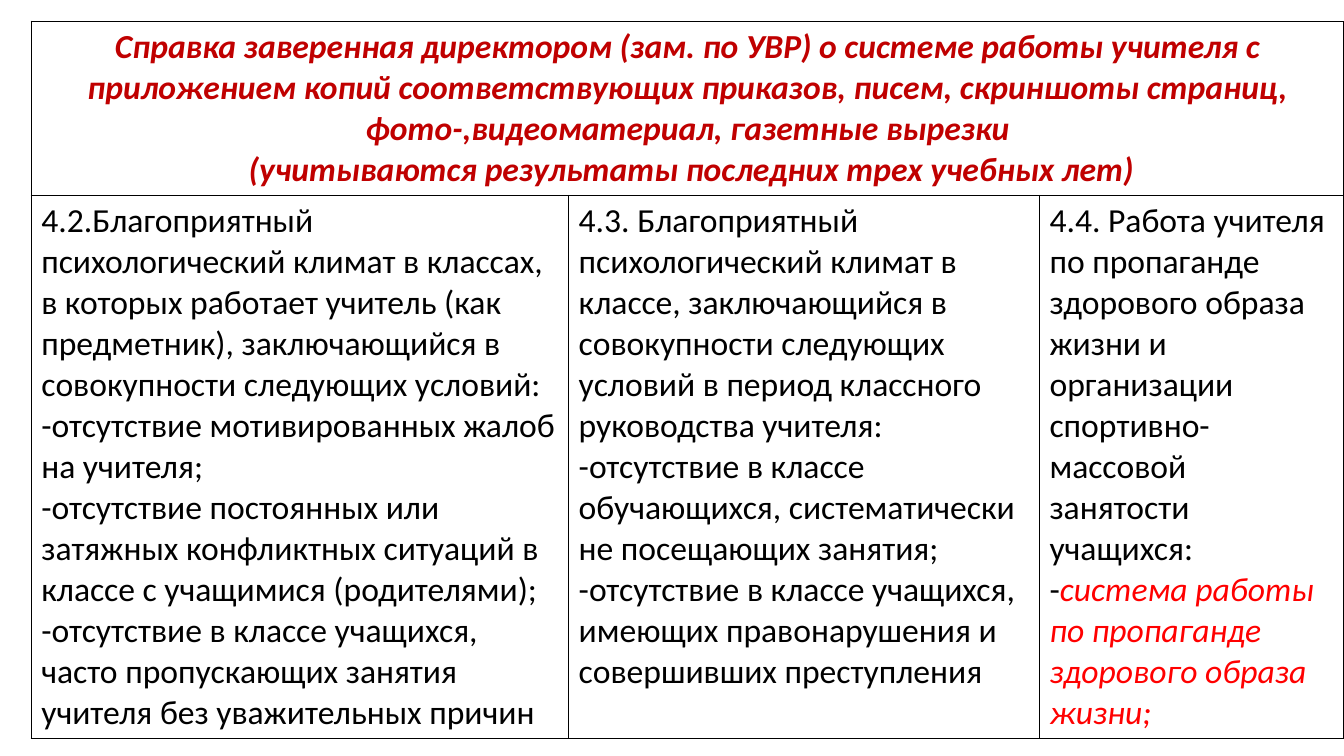
import pptx
import pptx.dml.color
import pptx.enum.text
import pptx.oxml
import pptx.oxml.ns
import pptx.util

Inches = pptx.util.Inches

COLORS = {"head": "C00000", "text": "000000", "note": "FF0000", "line": "000000"}
PLAIN = ("text", False, False)
HEAD = ("head", True, True)
NOTE = ("note", False, True)

# A cell is a list of paragraphs, a paragraph a list of (text, style) runs.
TITLE = [
    [("Справка заверенная директором (зам. по УВР) о системе работы учителя с "
      "приложением копий соответствующих приказов, писем, скриншоты страниц, "
      "фото-,видеоматериал, газетные вырезки", HEAD)],
    [(" (учитываются результаты последних трех учебных лет)", HEAD)],
]
CLIMATE = [
    [("4.2.Благоприятный психологический климат в классах, в которых работает "
      "учитель (как предметник), заключающийся в совокупности следующих условий:", PLAIN)],
    [("-отсутствие мотивированных жалоб на учителя;", PLAIN)],
    [("-отсутствие постоянных или затяжных конфликтных ситуаций в классе с "
      "учащимися (родителями);", PLAIN)],
    [("-отсутствие в классе учащихся, часто пропускающих занятия учителя без "
      "уважительных причин", PLAIN)],
]
CLASS = [
    [("4.3. Благоприятный психологический климат в классе, заключающийся в "
      "совокупности следующих условий в период классного руководства учителя:", PLAIN)],
    [("-отсутствие в классе обучающихся, систематически не посещающих занятия;", PLAIN)],
    [("-отсутствие в классе учащихся, имеющих правонарушения и совершивших "
      "преступления", PLAIN)],
]
HEALTH = [
    [("4.4. Работа учителя по пропаганде здорового образа жизни и организации\n"
      "спортивно-массовой занятости учащихся:\n-", PLAIN),
     ("система работы по пропаганде здорового образа жизни;", NOTE)],
]


class Deck:
    def __init__(self, font, size):
        self.font, self.size = font, pptx.util.Pt(size)
        self.file = pptx.Presentation()
        self.file.slide_width = Inches(13.33)
        self.file.slide_height = Inches(7.5)
        self.slide = self.file.slides.add_slide(self.file.slide_layouts[6])

    def table(self, left, top, widths, heights):
        frame = self.slide.shapes.add_table(
            len(heights), len(widths), Inches(left), Inches(top),
            Inches(sum(widths)), Inches(sum(heights)))
        table = frame.table
        table.first_row = table.horz_banding = False
        for col, width in zip(table.columns, widths):
            col.width = Inches(width)
        for row, height in zip(table.rows, heights):
            row.height = Inches(height)
        for cell in table.iter_cells():
            self.border(cell)
            cell.fill.background()
        return table

    def border(self, cell):
        props = cell._tc.get_or_add_tcPr()
        for side in ("lnL", "lnR", "lnT", "lnB"):
            props.append(pptx.oxml.parse_xml(
                f'<a:{side} {pptx.oxml.ns.nsdecls("a")} w="{pptx.util.Pt(1)}">'
                f'<a:solidFill><a:srgbClr val="{COLORS["line"]}"/></a:solidFill>'
                f'</a:{side}>'))

    def fill(self, cell, paras, align=pptx.enum.text.PP_ALIGN.LEFT):
        frame = cell.text_frame
        for i, runs in enumerate(paras):
            para = frame.add_paragraph() if i else frame.paragraphs[0]
            para.alignment = align
            for text, style in runs:
                self.run(para, text, style)

    def run(self, para, text, style):
        """Add text in one style, with a line break at each newline."""
        color, bold, italic = style
        for i, line in enumerate(text.split("\n")):
            if i:
                para.add_line_break()
            run = para.add_run()
            run.text = line
            font = run.font
            font.name, font.size = self.font, self.size
            font.bold, font.italic = bold, italic
            font.color.rgb = pptx.dml.color.RGBColor.from_string(COLORS[color])


def main():
    deck = Deck("Calibri", 24)
    table = deck.table(0.31, 0.21, [5.33, 4.67, 3.02], [1.73, 5.39])
    table.cell(0, 0).merge(table.cell(0, 2))
    deck.fill(table.cell(0, 0), TITLE, pptx.enum.text.PP_ALIGN.CENTER)
    for col, paras in enumerate((CLIMATE, CLASS, HEALTH)):
        deck.fill(table.cell(1, col), paras)
    deck.file.save("out.pptx")


if __name__ == "__main__":
    main()
